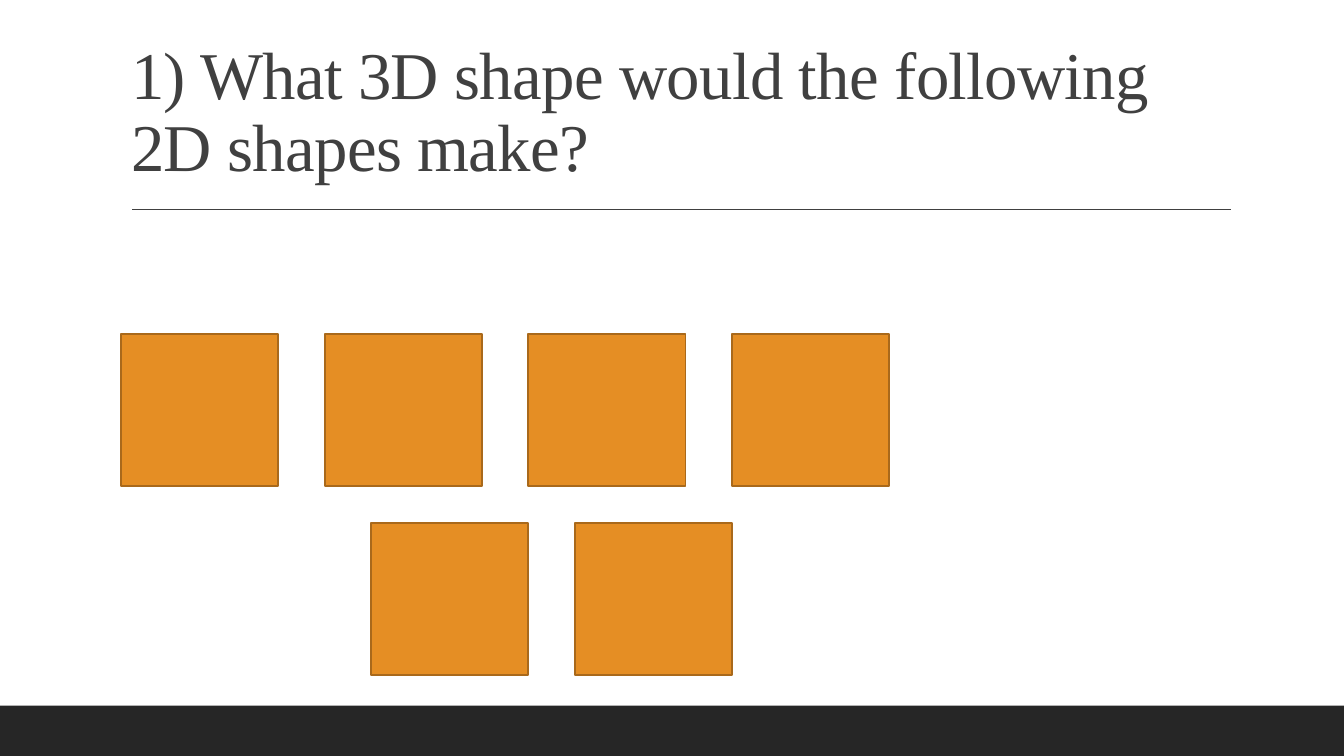
import pptx
import pptx.util
import pptx.dml.color
import pptx.enum.shapes
import pptx.enum.text
import pptx.oxml

Inches = pptx.util.Inches
Pt = pptx.util.Pt

SLIDE_WIDTH, SLIDE_HEIGHT = 13.33, 7.5
COLORS = {
    "background": "FFFFFF",
    "footer": "262626",
    "text": "404040",
    "square": "E58E24",
    "outline": "A9691B",
}
SQUARE_WIDTH, SQUARE_HEIGHT = 1.56, 1.51
COLUMN_STEP, ROW_STEP = 2.02, 1.88


def color(name):
    return pptx.dml.color.RGBColor.from_string(COLORS[name])


def add_rectangle(slide, left, top, width, height, fill, outline=None):
    shape = slide.shapes.add_shape(
        pptx.enum.shapes.MSO_SHAPE.RECTANGLE,
        Inches(left), Inches(top), Inches(width), Inches(height))
    shape.shadow.inherit = False
    shape.fill.solid()
    shape.fill.fore_color.rgb = color(fill)
    if outline:
        shape.line.color.rgb = color(outline)
        shape.line.width = Pt(1.25)
    else:
        shape.line.fill.background()


def add_heading(slide, left, top, width, height, text):
    """Fill the title placeholder and draw the rule beneath it."""
    title = slide.shapes.title
    title.left, title.top = Inches(left), Inches(top)
    title.width, title.height = Inches(width), Inches(height)
    frame = title.text_frame
    frame.text = text
    frame.word_wrap = True
    frame.auto_size = pptx.enum.text.MSO_AUTO_SIZE.NONE
    frame.vertical_anchor = pptx.enum.text.MSO_ANCHOR.BOTTOM
    paragraph = frame.paragraphs[0]
    paragraph.alignment = pptx.enum.text.PP_ALIGN.LEFT
    paragraph.line_spacing = 0.9
    paragraph.font.name = "Times New Roman"
    paragraph.font.size = Pt(47.7)
    paragraph.font.color.rgb = color("text")
    paragraph.runs[0].font._element.set("spc", "-50")

    rule_left, rule_top = left + 0.11, top + height + 0.18
    rule = slide.shapes.add_connector(
        pptx.enum.shapes.MSO_CONNECTOR.STRAIGHT,
        Inches(rule_left), Inches(rule_top),
        Inches(rule_left + width - 0.1), Inches(rule_top))
    rule.line.color.rgb = color("text")
    rule.line.width = Pt(1)
    rule._element.spPr.append(
        pptx.oxml.parse_xml(
            '<a:effectLst xmlns:a="http://schemas.openxmlformats.org/drawingml/2006/main"/>'))


def add_squares(slide, left, top, rows):
    """Draw one row of squares for each (indent, count) pair."""
    for row, (indent, count) in enumerate(rows):
        for column in range(count):
            add_rectangle(
                slide, left + indent + column * COLUMN_STEP, top + row * ROW_STEP,
                SQUARE_WIDTH, SQUARE_HEIGHT, "square", "outline")


def main():
    presentation = pptx.Presentation()
    presentation.slide_width = Inches(SLIDE_WIDTH)
    presentation.slide_height = Inches(SLIDE_HEIGHT)
    title_only = presentation.slide_layouts[5]
    slide = presentation.slides.add_slide(title_only)
    slide.background.fill.solid()
    slide.background.fill.fore_color.rgb = color("background")

    add_rectangle(slide, 0, SLIDE_HEIGHT - 0.5, SLIDE_WIDTH, 0.5, "footer")
    add_heading(slide, 1.2, 0.31, 11, 1.59,
                "1) What 3D shape would the following 2D shapes make?")
    add_squares(slide, 1.2, 3.31, rows=[(0, 4), (2.48, 2)])
    presentation.save("out.pptx")


if __name__ == "__main__":
    main()
